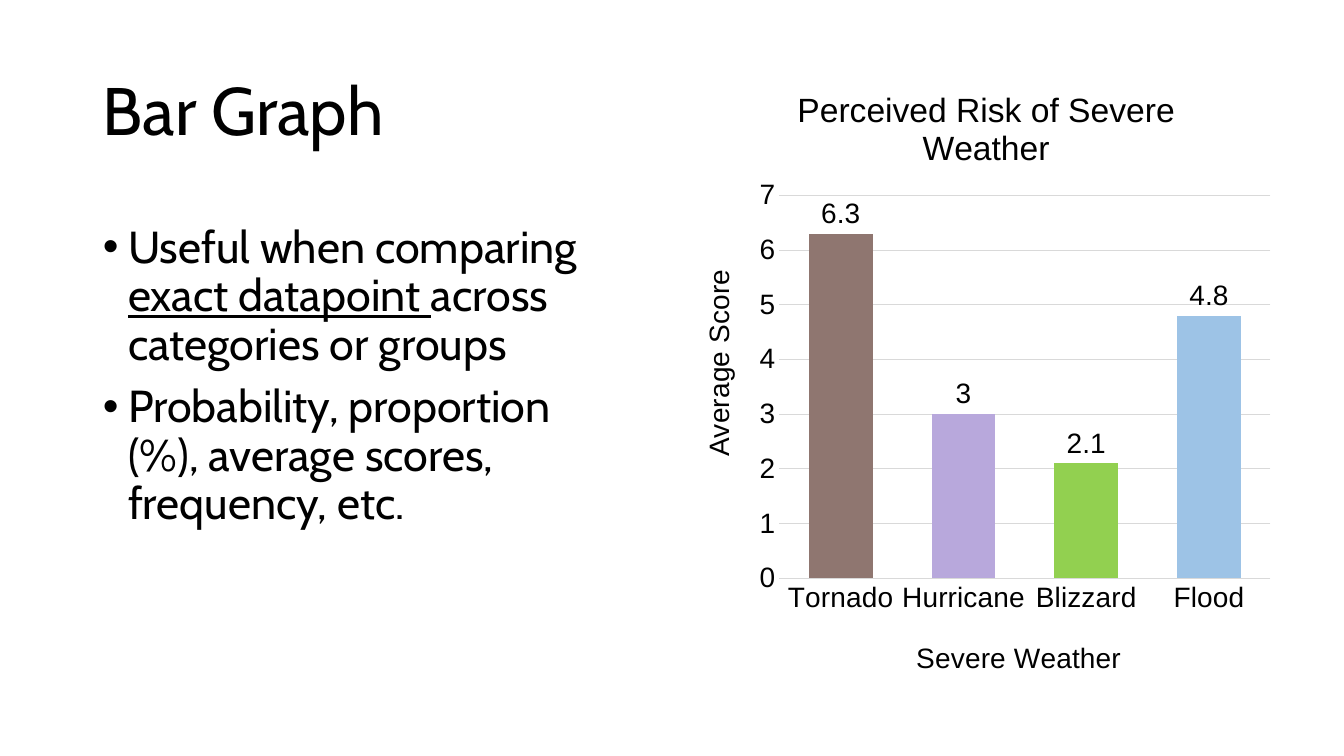
from lxml import etree
from pptx import Presentation, util as u
from pptx.chart.data import CategoryChartData
from pptx.dml.color import RGBColor
from pptx.enum import chart as charts, text
from pptx.oxml import ns

WIDTH, HEIGHT = 13.33, 7.5
BLACK, GREY = "000000", "D9D9D9"
TITLE_BOX = (0.92, 0.4, 11.5, 1.45)
BODY_BOX = (0.92, 2.18, 5.43, 4.51)
CHART_BOX = (6.78, 0.63, 5.94, 6.23)
BULLETS = [
    [("Useful when comparing ", False), ("exact datapoint ", True),
     ("across categories or groups", False)],
    [("Probability, proportion (%), average scores, frequency, etc.", False)],
]
# category: (average score, bar colour)
RISKS = {
    "Tornado": (6.3, "8F7670"),
    "Hurricane": (3, "B8A8DC"),
    "Blizzard": (2.1, "92D050"),
    "Flood": (4.8, "9DC3E6"),
}


def color(hex_string):
    return RGBColor.from_string(hex_string)


def style_font(font, name, size):
    font.name, font.size = name, u.Pt(size)
    font.bold = False
    font.color.rgb = color(BLACK)


def place(shape, box):
    shape.left, shape.top, shape.width, shape.height = map(u.Inches, box)


def add_run(paragraph, words, font_name, size, underline=False):
    run = paragraph.add_run()
    run.text = words
    style_font(run.font, font_name, size)
    if underline:
        run.font.underline = True


def fill_title(shape, box):
    place(shape, box)
    frame = shape.text_frame
    frame.vertical_anchor = text.MSO_ANCHOR.MIDDLE
    paragraph = frame.paragraphs[0]
    paragraph.alignment = text.PP_ALIGN.LEFT
    paragraph.line_spacing = 0.9
    add_run(paragraph, "Bar Graph", "Cabin", 48)


def fill_body(shape, box):
    place(shape, box)
    frame = shape.text_frame
    frame.auto_size = text.MSO_AUTO_SIZE.NONE
    for index, runs in enumerate(BULLETS):
        paragraph = frame.add_paragraph() if index else frame.paragraphs[0]
        paragraph.line_spacing = 0.9
        paragraph.space_before = u.Pt(10)
        # Hanging indent for the bullet
        properties = paragraph._p.get_or_add_pPr()
        properties.set("marL", str(u.Inches(0.25)))
        properties.set("indent", str(-u.Inches(0.25)))
        for words, underline in runs:
            add_run(paragraph, words, "Cabin", 32, underline)


def set_layout(parent, before, inner=False, **shares):
    """Place a chart part by shares of the chart's size."""
    for old in parent.findall(ns.qn("c:layout")):
        parent.remove(old)
    layout = etree.Element(ns.qn("c:layout"))
    manual = etree.SubElement(layout, ns.qn("c:manualLayout"))
    settings = {"layoutTarget": "inner"} if inner else {}
    settings |= {"xMode": "edge", "yMode": "edge"} | shares
    for tag, value in settings.items():
        etree.SubElement(manual, ns.qn("c:" + tag)).set("val", str(value))
    if before is None:
        parent.insert(0, layout)
    else:
        parent.find(ns.qn(before)).addnext(layout)


def write_title(owner, words, size, x, y):
    """Title a chart or an axis."""
    owner.has_title = True
    title = owner.chart_title if hasattr(owner, "chart_title") else owner.axis_title
    add_run(title.text_frame.paragraphs[0], words, "Arial", size)
    set_layout(title._element, "c:tx", x=x, y=y)


def add_risk_chart(slide, box):
    data = CategoryChartData()
    data.categories = list(RISKS)
    data.add_series("Series 1", [score for score, _ in RISKS.values()])
    chart = slide.shapes.add_chart(charts.XL_CHART_TYPE.COLUMN_CLUSTERED,
                                   *map(u.Inches, box), data).chart
    style_font(chart.font, "Arial", 20)
    chart.has_legend = False

    # Titles and plot area
    write_title(chart, "Perceived Risk of Severe Weather", 24, 0.18, 0.03)
    write_title(chart.category_axis, "Severe Weather", 20, 0.38, 0.91)
    write_title(chart.value_axis, "Average Score", 20, 0.02, 0.32)
    plot_area = chart._chartSpace.chart.plotArea
    set_layout(plot_area, None, inner=True, x=0.16, y=0.21, w=0.82, h=0.61)

    # Axes
    for axis in (chart.category_axis, chart.value_axis):
        axis.major_tick_mark = axis.minor_tick_mark = charts.XL_TICK_MARK.NONE
        style_font(axis.tick_labels.font, "Arial", 20)
    chart.value_axis.minimum_scale, chart.value_axis.maximum_scale = 0, 7
    chart.value_axis.major_unit = 1
    chart.value_axis.format.line.fill.background()
    for line in (chart.category_axis.format.line,
                 chart.value_axis.major_gridlines.format.line):
        line.color.rgb = color(GREY)
        line.width = u.Pt(0.75)

    # Bars and their labels
    plot = chart.plots[0]
    plot.gap_width, plot.overlap = 93, -27
    plot.vary_by_categories = False
    series = plot.series[0]
    series.format.fill.solid()
    series.format.fill.fore_color.rgb = color("ED7D31")
    for index, (_, bar_color) in enumerate(RISKS.values()):
        fill = series.points[index].format.fill
        fill.solid()
        fill.fore_color.rgb = color(bar_color)
    labels = series.data_labels
    labels.show_value = True
    labels.position = charts.XL_LABEL_POSITION.OUTSIDE_END
    style_font(labels.font, "Arial", 20)


def main():
    presentation = Presentation()
    presentation.slide_width = u.Inches(WIDTH)
    presentation.slide_height = u.Inches(HEIGHT)
    slide = presentation.slides.add_slide(presentation.slide_layouts[1])
    fill_title(slide.shapes.title, TITLE_BOX)
    fill_body(slide.placeholders[1], BODY_BOX)
    add_risk_chart(slide, CHART_BOX)
    presentation.save("out.pptx")


if __name__ == "__main__":
    main()
